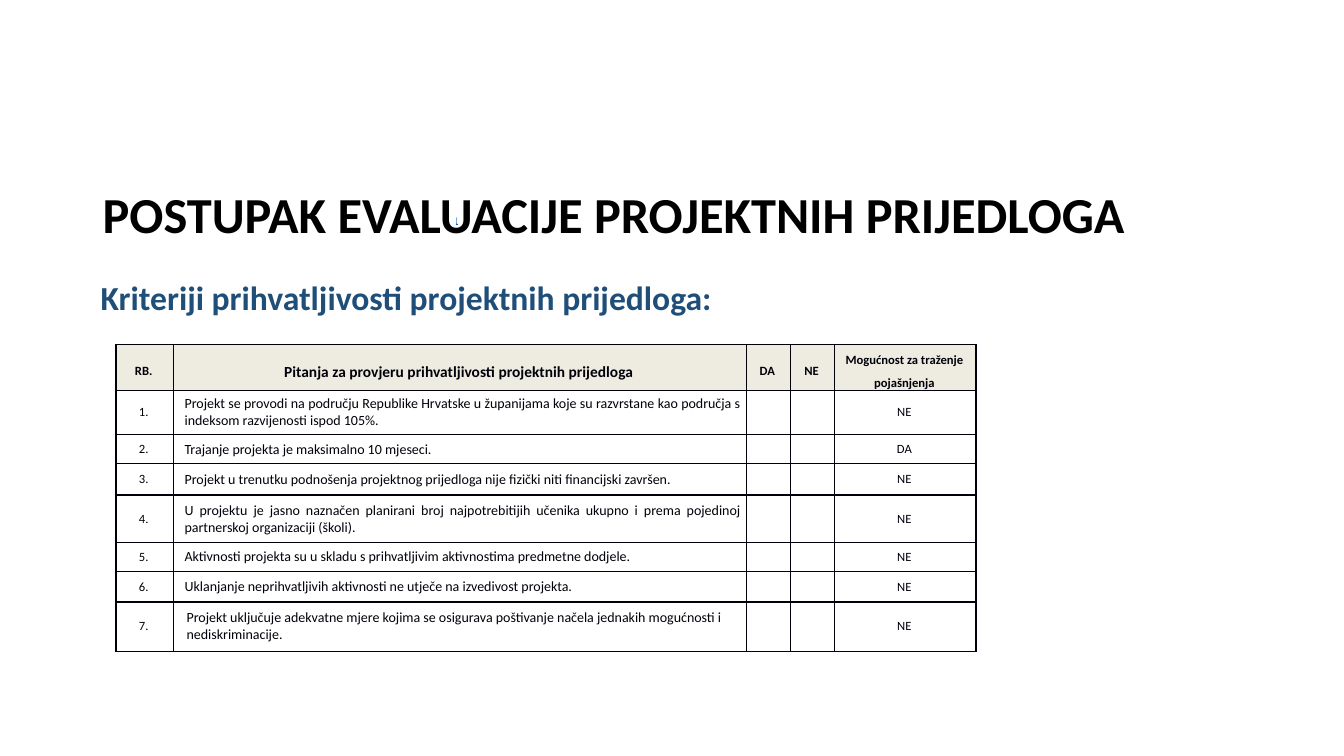
"""Build the slide with the eligibility criteria table for project proposals."""
from lxml import etree
from pptx import Presentation
from pptx import util as u
from pptx.dml.color import RGBColor
from pptx.enum import text
from pptx.oxml.ns import qn

INK, HEAD, WHITE = "00000A", "EEECE1", "FFFFFF"
LEFT, CENTER, JUSTIFY = text.PP_ALIGN.LEFT, text.PP_ALIGN.CENTER, text.PP_ALIGN.JUSTIFY
MIDDLE, BOTTOM, TOP = text.MSO_ANCHOR.MIDDLE, text.MSO_ANCHOR.BOTTOM, text.MSO_ANCHOR.TOP


def rgb(value):
    return RGBColor.from_string(value)


def write(p, words, size, color, bold=False, indent=0, **layout):
    for name, value in layout.items():
        setattr(p, name, value)
    if indent:
        p._p.get_or_add_pPr().set("marL", str(u.Inches(indent)))
    r = p.add_run()
    r.text = words
    for name, value in {"name": "Calibri", "size": u.Pt(size), "bold": bold}.items():
        setattr(r.font, name, value)
    r.font.color.rgb = rgb(color)
    return r


prs = Presentation()
prs.slide_width, prs.slide_height = u.Inches(13.33), u.Inches(7.5)
px, py = prs.slide_width / 100, prs.slide_height / 100
s = prs.slides.add_slide(prs.slide_layouts[6])

texts = [
    ((5.33, 29.73, 86.27, 63.47), "Kriteriji prihvatljivosti projektnih prijedloga:",
     {"size": 24, "color": "1F4E79", "bold": True, "indent": 0.19, "line_spacing": 0.9},
     {"word_wrap": True, "vertical_anchor": TOP, "margin_top": u.Inches(0.56)}),
    ((33.16, 27.73, 1.73, 3.33), "[", {"size": 9, "color": "0563C1"},
     {"word_wrap": False, "vertical_anchor": MIDDLE}),
    ((6.9, 15.33, 86.27, 19.33), "POSTUPAK EVALUACIJE PROJEKTNIH PRIJEDLOGA",
     {"size": 36, "color": "000000", "bold": True, "line_spacing": 0.9},
     {"word_wrap": True, "vertical_anchor": BOTTOM, "margin_bottom": u.Inches(0.17)}),
]
for (x, y, w, h), words, style, frame in texts:
    sp = s.shapes.add_textbox(int(x * px), int(y * py), int(w * px), int(h * py))
    tf = sp.text_frame
    for name, value in frame.items():
        setattr(tf, name, value)
    r = write(tf.paragraphs[0], words, **style)
    if words == "[":
        r.font.underline = True
        r._r.get_or_add_rPr().set("baseline", "30000")

header = ["RB.", "Pitanja za provjeru prihvatljivosti projektnih prijedloga", "DA", "NE",
          "Mogućnost za traženje pojašnjenja"]
questions = [
    ("Projekt se provodi na području Republike Hrvatske u županijama koje su razvrstane "
     "kao područja s indeksom razvijenosti ispod 105%.", "NE"),
    ("Trajanje projekta je maksimalno 10 mjeseci.", "DA"),
    ("Projekt u trenutku podnošenja projektnog prijedloga nije fizički niti financijski "
     "završen.", "NE"),
    ("U projektu je jasno naznačen planirani broj najpotrebitijih učenika ukupno i prema "
     "pojedinoj partnerskoj organizaciji (školi).", "NE"),
    ("Aktivnosti projekta su u skladu s prihvatljivim aktivnostima predmetne dodjele.", "NE"),
    ("Uklanjanje neprihvatljivih aktivnosti ne utječe na izvedivost projekta.", "NE"),
    ("Projekt uključuje adekvatne mjere kojima se osigurava poštivanje načela jednakih "
     "mogućnosti i nediskriminacije.", "NE"),
]
rows = [header] + [[f"{n}.", question, "", "", answer]
                   for n, (question, answer) in enumerate(questions, 1)]
widths = [4.28, 42.61, 3.3, 3.3, 10.5]
heights = [5.87, 5.87, 3.87, 4.13, 6.27, 3.87, 4, 6.53]

table = s.shapes.add_table(len(rows), len(widths), int(8.63 * px), int(45.6 * py),
                           int(sum(widths) * px), int(sum(heights) * py)).table
table.first_row = table.horz_banding = False
for column, width in zip(table.columns, widths):
    column.width = int(width * px)
for row, height in zip(table.rows, heights):
    row.height = int(height * py)

for i, row in enumerate(rows):
    for j, words in enumerate(row):
        cell = table.cell(i, j)
        margins = {"margin_left": 0.04, "margin_top": 0, "margin_right": 0.06, "margin_bottom": 0}
        for name, value in margins.items():
            setattr(cell, name, u.Inches(value))
        cell.vertical_anchor = MIDDLE
        p = cell.text_frame.paragraphs[0]
        if not words:
            p._p.get_or_add_endParaRPr().set("sz", "900")
        elif i == 0:
            write(p, words, 11 if j == 1 else 9, INK, True, alignment=CENTER, line_spacing=1.5)
        elif j == 1:
            last = i == len(questions)
            write(p, words, 10, INK, indent=0.09 if last else 0.07,
                  alignment=LEFT if last else JUSTIFY)
        else:
            write(p, words, 9, INK, alignment=CENTER)
        tcPr = cell._tc.get_or_add_tcPr()
        for side in ("a:lnL", "a:lnR", "a:lnT", "a:lnB"):
            ln = etree.SubElement(tcPr, qn(side), w=str(u.Pt(1)))
            fill = etree.SubElement(ln, qn("a:solidFill"))
            etree.SubElement(fill, qn("a:srgbClr"), val=INK)
        cell.fill.solid()
        cell.fill.fore_color.rgb = rgb(WHITE if i else HEAD)

prs.save("out.pptx")
